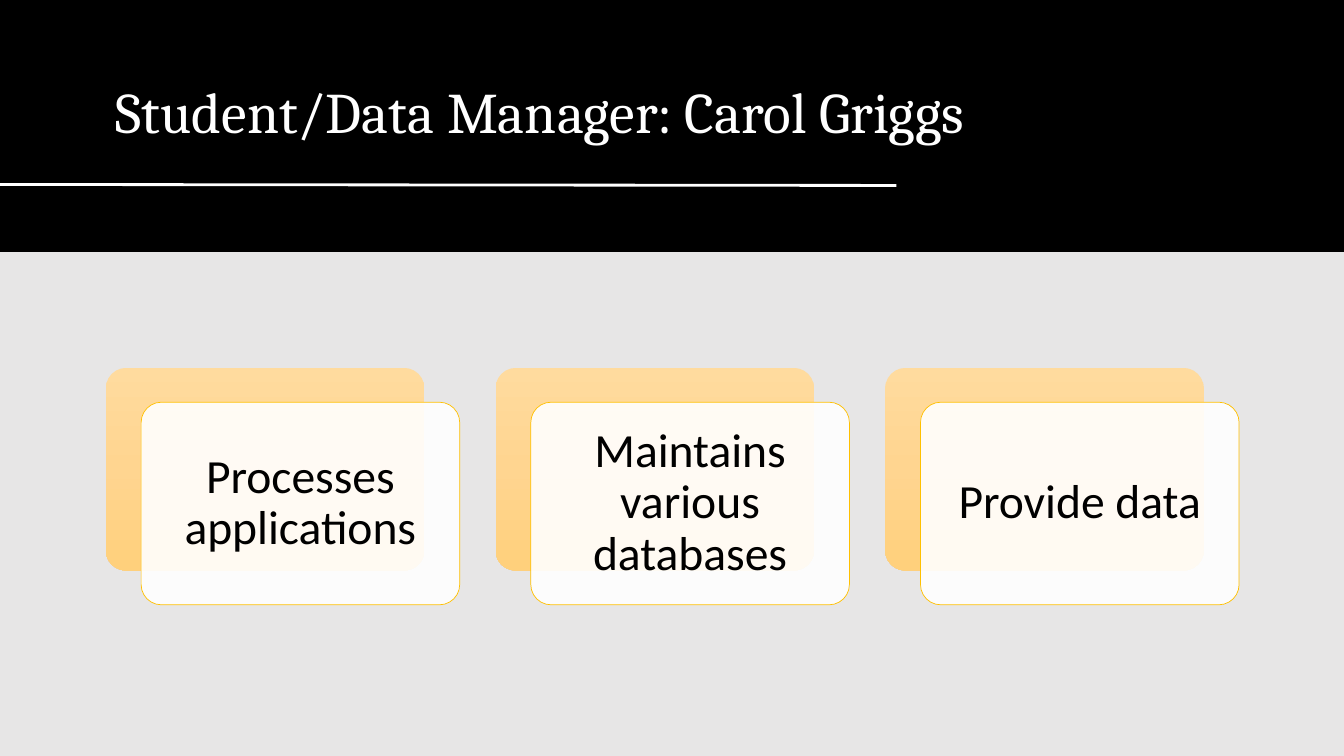
from copy import deepcopy
from dataclasses import dataclass

from lxml import etree
from pptx import Presentation
from pptx.dml.color import RGBColor
from pptx.enum.shapes import MSO_CONNECTOR as Connector, MSO_SHAPE as Shape
from pptx.enum.text import MSO_ANCHOR as Anchor, MSO_AUTO_SIZE as AutoSize, PP_ALIGN as Align
from pptx.oxml.ns import qn
from pptx.util import Inches, Pt


@dataclass(frozen=True)
class Theme:
    background: RGBColor = RGBColor.from_string("E7E6E6")
    black: RGBColor = RGBColor.from_string("000000")
    white: RGBColor = RGBColor.from_string("FFFFFF")
    outline: RGBColor = RGBColor.from_string("FFC000")
    gradient: tuple = tuple(map(RGBColor.from_string, ("FFDB9E", "FFD590", "FFD07C")))
    title_font: str = "Cambria"
    body_font: str = "Calibri"
    title_size: Pt = Pt(41)
    body_size: Pt = Pt(34)


theme = Theme()


def add_box(kind, left, top, width, height):
    box = slide.shapes.add_shape(kind, Inches(left), Inches(top), Inches(width), Inches(height))
    box.shadow.inherit = False
    box.line.fill.background()
    if kind == Shape.ROUNDED_RECTANGLE:
        box.adjustments[0] = 0.1
    return box


def write(shape, text, align, font, size, color):
    frame = shape.text_frame
    frame.word_wrap = True
    frame.auto_size = AutoSize.NONE
    frame.vertical_anchor = Anchor.MIDDLE
    para = frame.paragraphs[0]
    para.alignment = align
    para.line_spacing = 0.9
    span = para.add_run()
    span.text = text
    span.font.name = font
    span.font.size = size
    span.font.color.rgb = color


deck = Presentation()
deck.slide_width, deck.slide_height = Inches(13.33), Inches(7.5)
slide = deck.slides.add_slide(deck.slide_layouts.get_by_name("Title Only"))
slide.background.fill.solid()
slide.background.fill.fore_color.rgb = theme.background

# Header band, title and rule
title = slide.shapes.title
band = add_box(Shape.RECTANGLE, 0, 0, 13.33, 2.5)
band.fill.solid()
band.fill.fore_color.rgb = theme.black
title._element.addprevious(band._element)

title.left, title.top = Inches(1.05), Inches(0.47)
title.width, title.height = Inches(9.69), Inches(1.35)
write(title, "Student/Data Manager: Carol Griggs", Align.LEFT,
      theme.title_font, theme.title_size, theme.white)

rule = slide.shapes.add_connector(
    Connector.STRAIGHT, Inches(0), Inches(1.83), Inches(8.89), Inches(1.84))
rule.line.color.rgb = theme.white
rule.line.width = Pt(2)
etree.SubElement(rule._element.spPr, qn("a:effectLst"))

# Duty cards, each over an offset gradient panel
card_width, card_height = 3.16, 2.01
first_left, panel_top, pitch = 1.05, 3.65, 3.865
offset_x, offset_y = 0.35, 0.34
duties = ["Processes applications", "Maintains various databases", "Provide data"]

for index, duty in enumerate(duties):
    left = first_left + index * pitch
    panel = add_box(Shape.ROUNDED_RECTANGLE, left, panel_top, card_width, card_height)
    panel.fill.gradient()
    panel.fill.gradient_angle = 270
    first_stop = panel._element.spPr.find(".//" + qn("a:gs"))
    first_stop.addnext(deepcopy(first_stop))
    for stop, position, color in zip(panel.fill.gradient_stops, (0, 0.5, 1), theme.gradient):
        stop.position = position
        stop.color.rgb = color

    card = add_box(Shape.ROUNDED_RECTANGLE, left + offset_x, panel_top + offset_y,
                   card_width, card_height)
    card.fill.solid()
    card.fill.fore_color.rgb = theme.white
    white_fill = card._element.spPr.find(qn("a:solidFill")).find(qn("a:srgbClr"))
    etree.SubElement(white_fill, qn("a:alpha"), val="90000")
    card.line.color.rgb = theme.outline
    card.line.width = Pt(0.5)
    frame = card.text_frame
    frame.margin_left = frame.margin_right = Inches(0.14)
    frame.margin_top = frame.margin_bottom = Inches(0.14)
    write(card, duty, Align.CENTER, theme.body_font, theme.body_size, theme.black)

deck.save("out.pptx")
